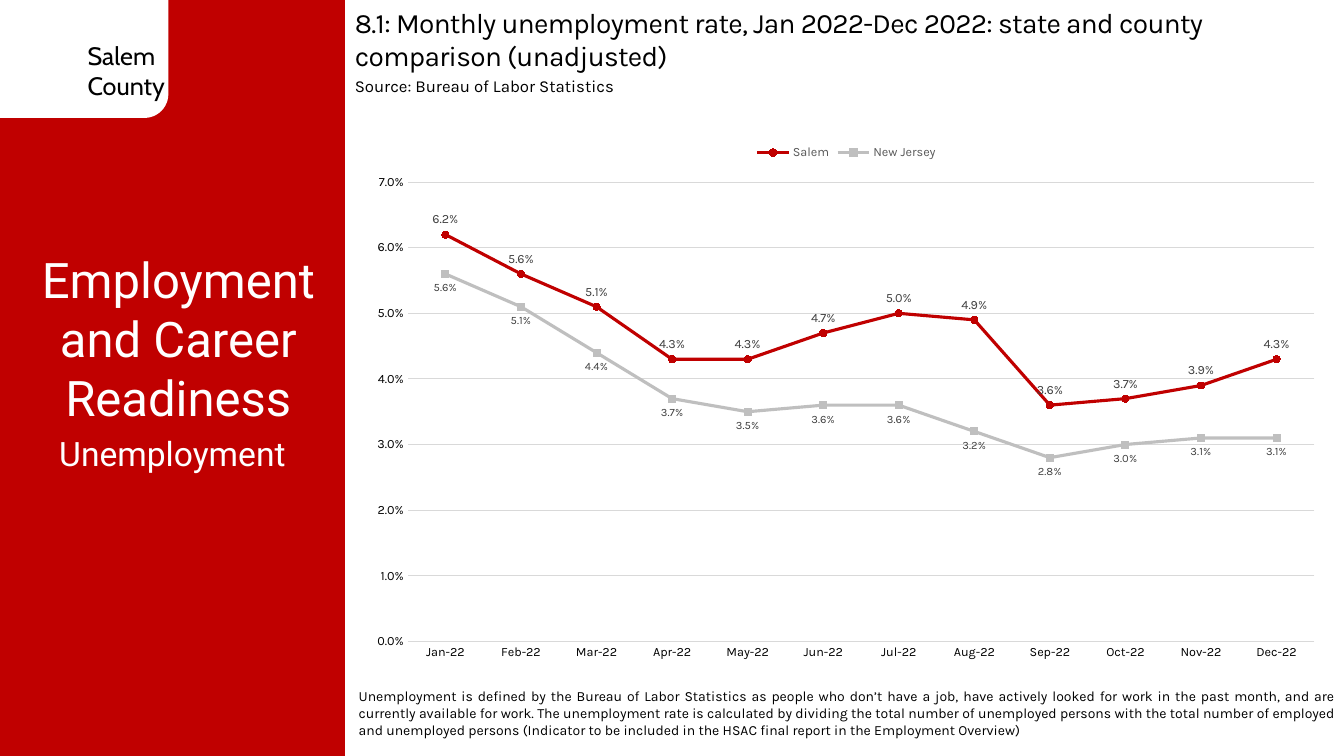
from lxml.etree import fromstring
from pptx import Presentation
from pptx.chart.data import CategoryChartData
from pptx.dml.color import RGBColor
from pptx.enum.chart import (XL_CHART_TYPE, XL_LABEL_POSITION, XL_LEGEND_POSITION,
                             XL_MARKER_STYLE, XL_TICK_MARK)
from pptx.enum.shapes import MSO_SHAPE
from pptx.enum.text import MSO_ANCHOR, MSO_AUTO_SIZE, PP_ALIGN
from pptx.util import Inches, Pt

COLORS = {k: RGBColor.from_string(v) for k, v in {
    "red": "C00000", "white": "FFFFFF", "black": "000000", "silver": "BFBFBF",
    "grid": "D9D9D9", "label": "404040", "legend": "595959"}.items()}
SIDE = 3.42  # width of the red side panel

prs = Presentation()
prs.slide_width, prs.slide_height = Inches(13.33), Inches(7.5)
s = prs.slides.add_slide(prs.slide_layouts[5])


def style(font, size, color, name="Karla"):
    font.size, font.name, font.bold = Pt(size), name, False
    font.color.rgb = COLORS[color]


def write(sp, box, lines, size, color="black", name="Karla", align=PP_ALIGN.LEFT):
    sp.left, sp.top, sp.width, sp.height = map(Inches, box)
    tf = sp.text_frame
    tf.word_wrap, tf.auto_size = True, MSO_AUTO_SIZE.NONE
    tf.vertical_anchor = MSO_ANCHOR.TOP
    for i, line in enumerate(lines):
        p = tf.add_paragraph() if i else tf.paragraphs[0]
        p.alignment = align
        r = p.add_run()
        r.text = line
        style(r.font, size, color, name)
    return tf


# Side panel and county tab
for shape, box, color in [
        (MSO_SHAPE.RECTANGLE, (0, 0, SIDE, 7.5), "red"),
        (MSO_SHAPE.ROUNDED_RECTANGLE, (-0.33, -0.25, 2, 1.42), "white")]:
    sp = s.shapes.add_shape(shape, *map(Inches, box))
    sp.shadow.inherit = False
    sp.fill.solid()
    sp.fill.fore_color.rgb = COLORS[color]
    sp.line.fill.background()

# Headline
tf = write(s.shapes.title, (SIDE, 0, 9.86, 0.77),
           ["8.1: Monthly unemployment rate, Jan 2022-Dec 2022: "
            "state and county comparison (unadjusted)"], 20)
tf.paragraphs[0].runs[0].font._element.set("spc", "-50")

# Panel texts, source and definition
definition = (
    "Unemployment is defined by the Bureau of Labor Statistics as people who don’t have a job, "
    "have actively looked for work in the past month, and are currently available for work. "
    "The unemployment rate is calculated by dividing the total number of unemployed persons "
    "with the total number of employed and unemployed persons (Indicator to be included in "
    "the HSAC final report in the Employment Overview)")
for box, lines, size, color, name, align in [
        ((0.77, 0.35, 1, 0.71), ["Salem", "County"], 18, "black", "Cabin", PP_ALIGN.LEFT),
        ((0.06, 2.43, SIDE, 1.87), ["Employment and Career Readiness"], 35, "white",
         "Roboto", PP_ALIGN.CENTER),
        ((0, 4.25, SIDE, 0.5), ["Unemployment"], 24, "white", "Roboto", PP_ALIGN.CENTER),
        ((SIDE, 0.7, 9.19, 0.3), ["Source: Bureau of Labor Statistics"], 12, "black",
         "Karla", PP_ALIGN.LEFT),
        ((3.46, 6.77, 9.87, 0.66), [definition], 10, "black", "Karla", PP_ALIGN.JUSTIFY)]:
    write(s.shapes.add_textbox(0, 0, 0, 0), box, lines, size, color, name, align)

# Chart data, in percent
rates = {
    "Salem": [6.2, 5.6, 5.1, 4.3, 4.3, 4.7, 5.0, 4.9, 3.6, 3.7, 3.9, 4.3],
    "New Jersey": [5.6, 5.1, 4.4, 3.7, 3.5, 3.6, 3.6, 3.2, 2.8, 3.0, 3.1, 3.1]}
data = CategoryChartData(number_format="0.0%")
data.categories = [f"{m}-22" for m in
                   "Jan Feb Mar Apr May Jun Jul Aug Sep Oct Nov Dec".split()]
for county, values in rates.items():
    data.add_series(county, [round(v / 100, 3) for v in values])
chart = s.shapes.add_chart(XL_CHART_TYPE.LINE_MARKERS, Inches(3.56), Inches(1.33),
                           Inches(9.67), Inches(5.3), data).chart
style(chart.font, 10, "black", "Calibri")
chart.has_title = False
chart.has_legend = True
chart.legend.position = XL_LEGEND_POSITION.TOP
chart.legend.include_in_layout = False
style(chart.legend.font, 9, "legend")

# Axes
cat, val = chart.category_axis, chart.value_axis
for axis in (cat, val):
    axis.major_tick_mark = axis.minor_tick_mark = XL_TICK_MARK.NONE
    style(axis.tick_labels.font, 9, "black")
val.minimum_scale, val.maximum_scale, val.major_unit = 0, 0.07, 0.01
val.has_major_gridlines = True
val.tick_labels.number_format = "0.0%"
val.tick_labels.number_format_is_linked = False
val.format.line.fill.background()
for line in (cat.format.line, val.major_gridlines.format.line):
    line.color.rgb, line.width = COLORS["grid"], Pt(0.75)

# Series
plot = chart.plots[0]
plot.vary_by_categories = False
for series, color, marker, pos, size in zip(
        plot.series, ("red", "silver"), (XL_MARKER_STYLE.CIRCLE, XL_MARKER_STYLE.SQUARE),
        (XL_LABEL_POSITION.ABOVE, XL_LABEL_POSITION.BELOW), (9, 8)):
    series.smooth = False
    series.format.line.color.rgb, series.format.line.width = COLORS[color], Pt(2.25)
    series.marker.style, series.marker.size = marker, 5
    series.marker.format.fill.solid()
    series.marker.format.fill.fore_color.rgb = COLORS[color]
    series.marker.format.line.color.rgb = COLORS[color]
    labels = series.data_labels
    labels.show_value, labels.position = True, pos
    labels.number_format, labels.number_format_is_linked = "0.0%", False
    style(labels.font, size, "label")

# Plot area as shares of the chart
C = "http://schemas.openxmlformats.org/drawingml/2006/chart"
area = chart._chartSpace.find(f".//{{{C}}}plotArea")
for old in area.findall(f"{{{C}}}layout"):
    area.remove(old)
area.insert(0, fromstring(
    f'<c:layout xmlns:c="{C}"><c:manualLayout><c:layoutTarget val="inner"/>'
    '<c:xMode val="edge"/><c:yMode val="edge"/><c:x val="0.05"/><c:y val="0.09"/>'
    '<c:w val="0.93"/><c:h val="0.86"/></c:manualLayout></c:layout>'))

prs.save("out.pptx")
